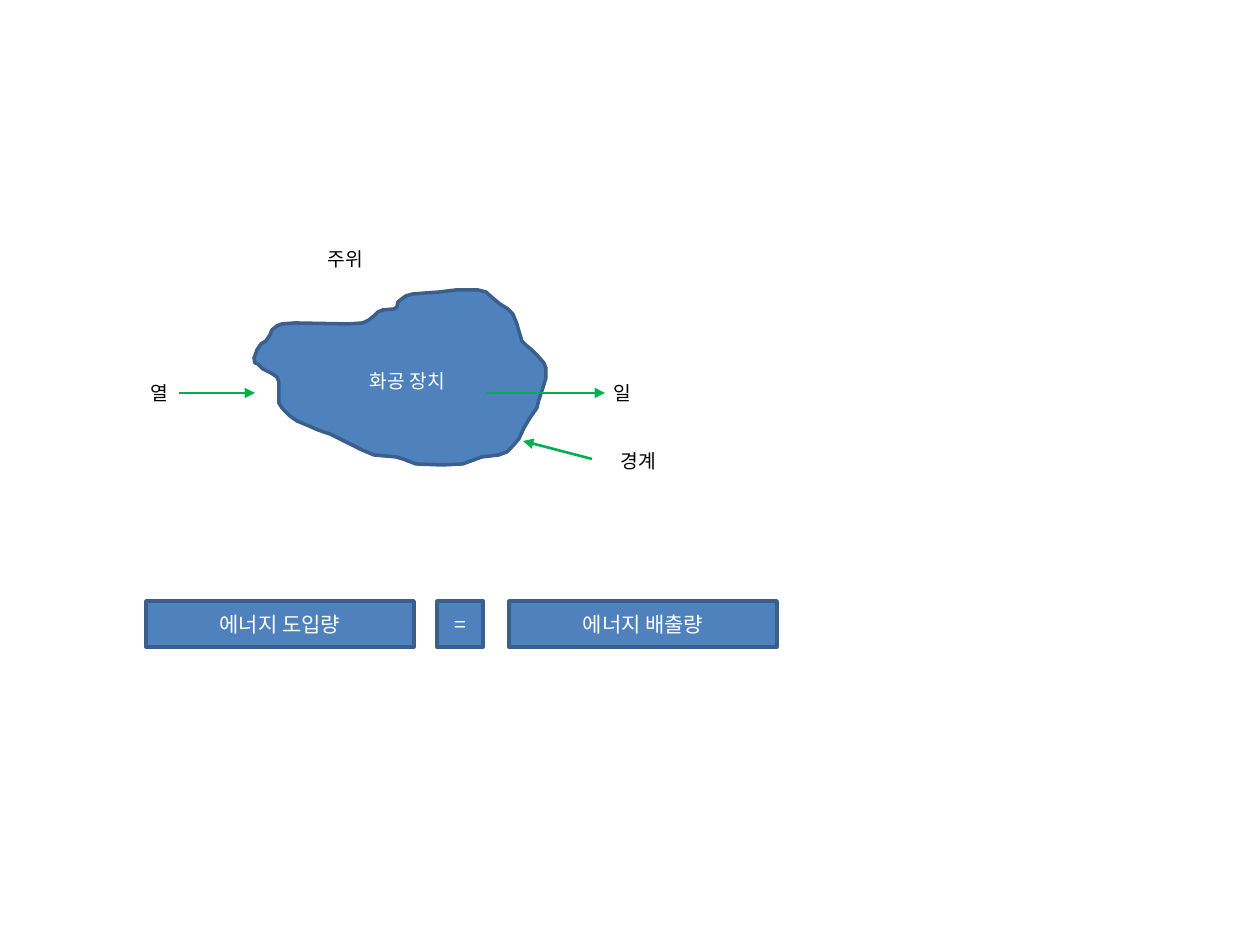
"""Build the energy balance slide: a process unit, its surroundings and the balance equation."""
from lxml import etree
from pptx import Presentation
from pptx import util as u
from pptx.dml.color import RGBColor
from pptx.enum import shapes, text
from pptx.oxml.ns import qn

PX = 914400 / 126
FONT = "Noto Sans CJK KR"
BLUE = RGBColor(0x4F, 0x81, 0xBD)
NAVY = RGBColor(0x3A, 0x5F, 0x8C)
GREEN = RGBColor(0x00, 0xB0, 0x50)
BLACK = RGBColor(0, 0, 0)
WHITE = RGBColor(255, 255, 255)

BOUNDARY = [
    (397, 307), (394, 309), (383, 310), (378, 312), (374, 316), (369, 320),
    (363, 323), (348, 324), (295, 323), (282, 324), (277, 326), (272, 330),
    (270, 335), (266, 341), (261, 344), (257, 350), (256, 353), (254, 358),
    (255, 363), (258, 364), (263, 369), (271, 373), (277, 377), (279, 382),
    (279, 394), (279, 403), (282, 408), (290, 416), (297, 421), (309, 426),
    (318, 430), (330, 434), (340, 439), (352, 445), (362, 450), (374, 455),
    (396, 457), (403, 459), (416, 464), (442, 465), (463, 464), (471, 461),
    (482, 457), (499, 455), (507, 452), (512, 447), (519, 439), (524, 428),
    (530, 418), (537, 408), (539, 400), (543, 388), (546, 378), (546, 368),
    (544, 363), (537, 355), (532, 350), (527, 346), (522, 341), (519, 331),
    (517, 324), (513, 314), (508, 309), (500, 304), (494, 299), (486, 292),
    (478, 290), (456, 290), (440, 292), (413, 294), (406, 296), (398, 302),
]
ARROWS = [(179, 393, 255, 393), (486, 393, 605, 393), (592, 459, 523, 441)]
LABEL_H = 30
LABELS = [
    ("열", 137, 378, 42, BLACK),
    ("주위", 314, 244, 89, BLACK),
    ("화공 장치", 356, 366, 117, WHITE),
    ("일", 600, 378, 42, BLACK),
    ("경계", 607, 446, 84, BLACK),
]
BALANCE_Y, BALANCE_H = 601, 46
BALANCE = [("에너지 도입량", 146, 268), ("에너지 배출량", 509, 268), ("=", 437, 46)]


def px(*values):
    return [u.Emu(round(v * PX)) for v in values]


def paint(sp):
    sp.shadow.inherit = False
    sp.fill.solid()
    sp.fill.fore_color.rgb = BLUE
    sp.line.color.rgb = NAVY
    sp.line.width = u.Pt(2)


def write(sp, words, size, color, align):
    tf = sp.text_frame
    tf.word_wrap = True
    tf.vertical_anchor = text.MSO_ANCHOR.MIDDLE
    p = tf.paragraphs[0]
    p.alignment = align
    r = p.add_run()
    r.text = words
    r.font.size = u.Pt(size)
    r.font.name = FONT
    r.font.color.rgb = color
    etree.SubElement(r.font._element, qn("a:ea"), typeface=FONT)


def add_arrow(group, ends):
    line = group.shapes.add_connector(shapes.MSO_CONNECTOR.STRAIGHT, *px(*ends))
    line.line.color.rgb = GREEN
    line.line.width = u.Pt(1.5)
    etree.SubElement(line.line._get_or_add_ln(), qn("a:tailEnd"), type="triangle")
    etree.SubElement(line._element.spPr, qn("a:effectLst"))
    return line


def add_label(group, words, x, y, w, color):
    sp = group.shapes.add_shape(shapes.MSO_SHAPE.ROUNDED_RECTANGLE, *px(x, y, w, LABEL_H))
    sp.shadow.inherit = False
    sp.fill.background()
    sp.line.fill.background()
    write(sp, words, 11, color, text.PP_ALIGN.LEFT)
    return sp


def main():
    prs = Presentation()
    prs.slide_width, prs.slide_height = px(1260, 945)
    s = prs.slides.add_slide(prs.slide_layouts[6])

    system = s.shapes.add_group_shape()
    outline = system.shapes.build_freeform(*BOUNDARY[0], scale=PX)
    outline.add_line_segments(BOUNDARY[1:], close=True)
    paint(outline.convert_to_shape())
    arrows = [add_arrow(system, ends) for ends in ARROWS]
    labels = [add_label(system, *label) for label in LABELS]
    arrows[0].begin_connect(labels[0], 3)

    balance = s.shapes.add_group_shape()
    for words, x, w in BALANCE:
        sp = balance.shapes.add_shape(
            shapes.MSO_SHAPE.RECTANGLE, *px(x, BALANCE_Y, w, BALANCE_H))
        paint(sp)
        write(sp, words, 12, WHITE, text.PP_ALIGN.CENTER)

    prs.save("out.pptx")


if __name__ == "__main__":
    main()
